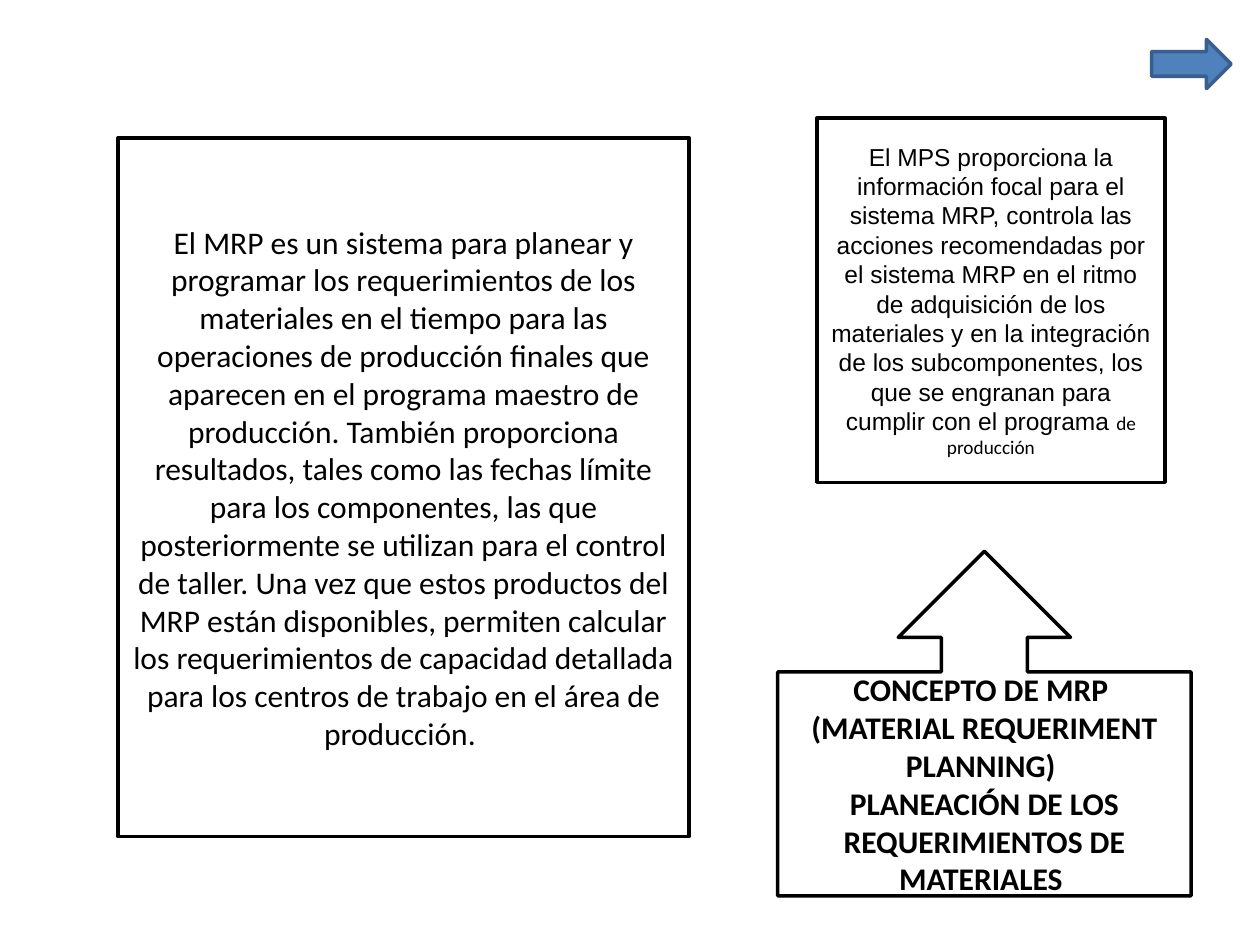
from pptx import Presentation
from pptx.dml.color import RGBColor as RGB
from pptx.enum.shapes import MSO_SHAPE as SHAPE
from pptx.enum.text import MSO_ANCHOR as ANCHOR, PP_ALIGN as ALIGN
from pptx.util import Pt

HUES = {"ink": "000000", "paper": "FFFFFF", "blue": "4F81BD", "edge": "3A5F8C"}

MRP = (
    "El MRP es un sistema para planear y programar los requerimientos de los "
    "materiales en el tiempo para las operaciones de producción finales que "
    "aparecen en el programa maestro de producción. También proporciona "
    "resultados, tales como las fechas límite para los componentes, las que "
    "posteriormente se utilizan para el control de taller. Una vez que estos "
    "productos del MRP están disponibles, permiten calcular los requerimientos "
    "de capacidad detallada para los centros de trabajo en el área de producción. "
)
MPS = (
    "El MPS proporciona la información focal para el sistema MRP, controla las "
    "acciones recomendadas por el sistema MRP en el ritmo de adquisición de los "
    "materiales y en la integración de los subcomponentes, los que se engranan "
    "para cumplir con el programa "
)
TITLE = (
    "CONCEPTO DE MRP \n(MATERIAL REQUERIMENT PLANNING) \n"
    "PLANEACIÓN DE LOS REQUERIMIENTOS DE MATERIALES "
)


def add_box(slide, kind, x, y, w, h, fill="paper", line="ink"):
    """Add a filled and outlined shape, measured in points."""
    box = slide.shapes.add_shape(kind, Pt(x), Pt(y), Pt(w), Pt(h))
    box.shadow.inherit = False
    box.fill.solid()
    box.fill.fore_color.rgb = RGB.from_string(HUES[fill])
    box.line.color.rgb = RGB.from_string(HUES[line])
    box.line.width = Pt(2)
    return box


def write(box, text, size=18, font="Calibri", bold=False, after=0):
    """Append centred text to the first paragraph of a shape."""
    frame = box.text_frame
    frame.word_wrap = True
    frame.vertical_anchor = ANCHOR.MIDDLE
    para = frame.paragraphs[0]
    para.alignment = ALIGN.CENTER
    para.space_after = Pt(after)
    for i, part in enumerate(text.split("\n")):
        if i:
            para.add_line_break()
        run = para.add_run()
        run.text = part
        run.font.size = Pt(size)
        run.font.name = font
        run.font.bold = bold
        run.font.color.rgb = RGB.from_string(HUES["ink"])


def main():
    """Build the slide and save it."""
    deck = Presentation()
    deck.slide_width, deck.slide_height = Pt(720), Pt(540)
    slide = deck.slides.add_slide(deck.slide_layouts[6])

    plan = add_box(slide, SHAPE.FLOWCHART_PROCESS, 67.5, 78.75, 326.25, 399.4)
    write(plan, MRP)

    focus = add_box(slide, SHAPE.FLOWCHART_PROCESS, 466.9, 67.5, 198.8, 208.1)
    write(focus, MPS, size=14, font="Arial", after=10)
    write(focus, "de producción", size=11, after=10)

    title = add_box(slide, SHAPE.UP_ARROW_CALLOUT, 444.4, 315, 236.2, 196.9)
    write(title, TITLE, bold=True)

    add_box(slide, SHAPE.RIGHT_ARROW, 658.1, 22.5, 45.4, 28.1, "blue", "edge")
    deck.save("out.pptx")


if __name__ == "__main__":
    main()
